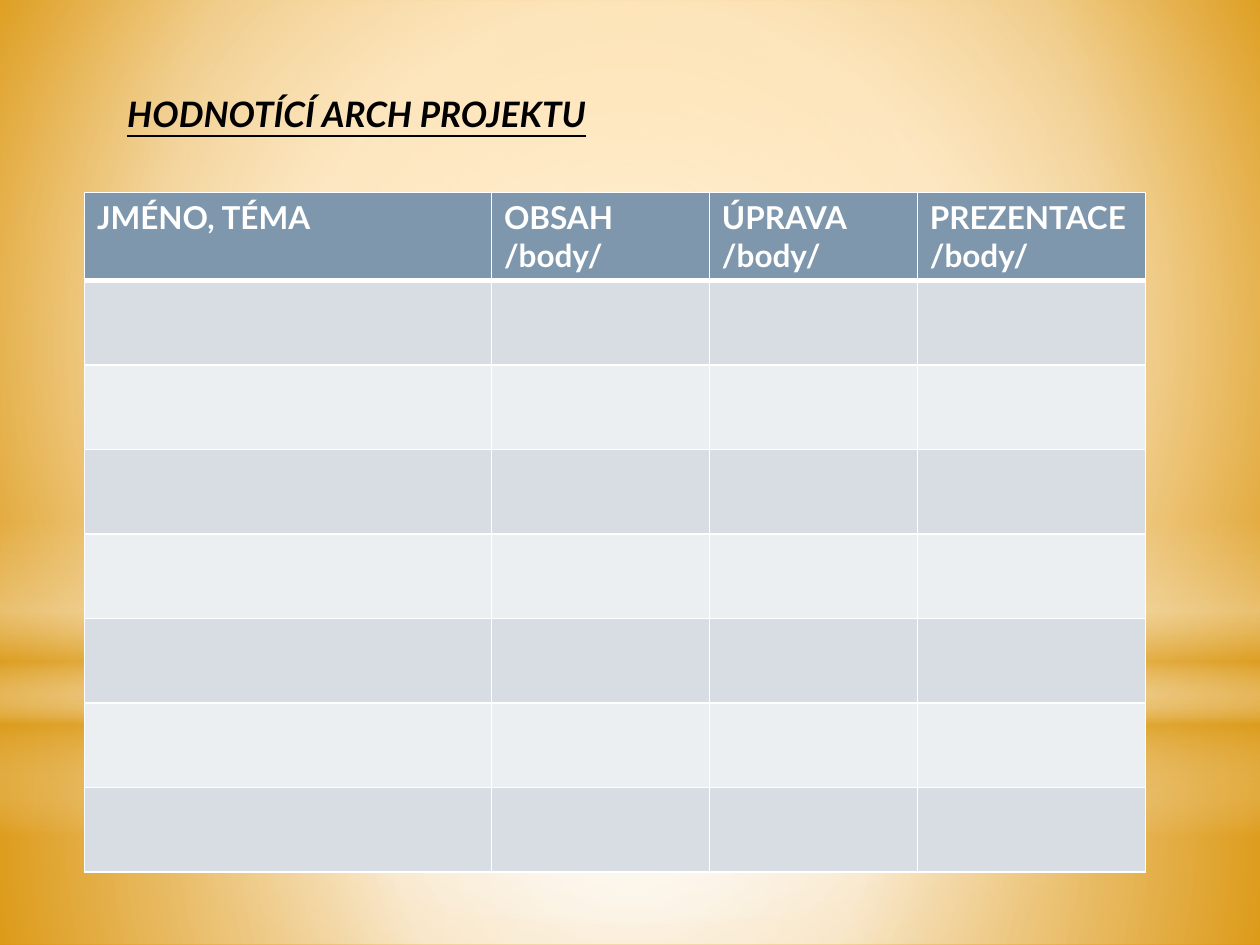
from dataclasses import dataclass

from pptx import Presentation
from pptx.dml.color import RGBColor
from pptx.enum.shapes import MSO_SHAPE
from pptx.enum.text import MSO_ANCHOR, MSO_AUTO_SIZE, PP_ALIGN
from pptx.oxml import parse_xml
from pptx.oxml.ns import nsdecls, qn
from pptx.util import Pt


@dataclass(frozen=True)
class Theme:
    font: str = "Lato"
    title_size: int = 20
    table_size: int = 18
    ink: str = "000000"
    white: str = "FFFFFF"
    gold: str = "DC9E1F"
    header: str = "7E97AD"
    bands: tuple = ("D8DDE3", "ECEFF1")


THEME = Theme()
CIRCLE = '<a:path path="circle"><a:fillToRect l="{}000" t="{}000" r="{}000" b="{}000"/></a:path>'
CENTERED = CIRCLE.format(50, 50, 50, 50)
VERTICAL = '<a:lin ang="5400000" scaled="0"/>'
COLUMNS = [
    (232.56, ["JMÉNO, TÉMA"]),
    (124.56, ["OBSAH", "/body/"]),
    (118.8, ["ÚPRAVA", "/body/"]),
    (130.32, ["PREZENTACE", "/body/"]),
]
BODY_ROWS = 7
ROW_HEIGHT = 48.25


def set_gradient(fill, element, stops, direction):
    fill.solid()
    fill.fore_color.rgb = RGBColor.from_string(THEME.white)
    solid = next(element.iter(qn("a:solidFill")))
    marks = "".join(
        f'<a:gs pos="{position}000"><a:srgbClr val="{color}">'
        f'<a:alpha val="{opacity}000"/></a:srgbClr></a:gs>'
        for position, color, opacity in stops
    )
    gradient = parse_xml(
        f'<a:gradFill {nsdecls("a")} rotWithShape="1"><a:gsLst>{marks}</a:gsLst>{direction}</a:gradFill>'
    )
    solid.getparent().replace(solid, gradient)


def add_glow(page, kind, top, height, stops, direction=CENTERED):
    glow = page.shapes.add_shape(kind, Pt(0), Pt(top), Pt(720), Pt(height))
    glow.shadow.inherit = False
    set_gradient(glow.fill, glow.element, stops, direction)
    glow.line.fill.background()


def add_backdrop(page):
    white, gold = THEME.white, THEME.gold
    background_stops = [(0, "FFA607", 100), (60, "F9CD88", 100), (100, "E08E02", 100)]
    set_gradient(page.background.fill, page.element, background_stops, CIRCLE.format(20, 10, 20, 60))
    rectangle = MSO_SHAPE.RECTANGLE
    add_glow(page, rectangle, 402, 138, [(0, white, 91), (37, white, 76), (100, gold, 79)])
    add_glow(page, rectangle, 0, 402, [(0, white, 89), (48, white, 62), (100, gold, 79)])
    horizon = [(0, white, 0), (29, white, 30), (45, gold, 40),
               (55, white, 26), (65, gold, 60), (100, white, 0)]
    add_glow(page, rectangle, 297, 180, horizon, VERTICAL)
    add_glow(page, MSO_SHAPE.OVAL, 126, 402, [(0, white, 100), (56, white, 0)])


def add_span(para, text, size, color):
    span = para.add_run()
    span.text = text
    span.font.name = THEME.font
    span.font.size = Pt(size)
    span.font.bold = True
    span.font.color.rgb = RGBColor.from_string(color)
    return span


def add_title(page, text):
    box = page.shapes.title
    box.left, box.top, box.width, box.height = Pt(65.5), Pt(49), Pt(283.7), Pt(55.4)
    frame = box.text_frame
    frame.word_wrap = False
    frame.auto_size = MSO_AUTO_SIZE.NONE
    frame.vertical_anchor = MSO_ANCHOR.TOP
    para = frame.paragraphs[0]
    para.alignment = PP_ALIGN.LEFT
    span = add_span(para, text, THEME.title_size, THEME.ink)
    span.font.italic = True
    span.font.underline = True
    box.element.getparent().append(box.element)


def format_cell(cell, color, top=1, bottom=1):
    cell.fill.solid()
    cell.fill.fore_color.rgb = RGBColor.from_string(color)
    properties = cell._tc.get_or_add_tcPr()
    for index, (side, width) in enumerate(zip("LRTB", (1, 1, top, bottom))):
        border = parse_xml(
            f'<a:ln{side} {nsdecls("a")} w="{Pt(width)}"><a:solidFill>'
            f'<a:srgbClr val="{THEME.white}"/></a:solidFill></a:ln{side}>'
        )
        properties.insert(index, border)


def add_score_table(page):
    total_width = sum(width for width, _ in COLUMNS)
    row_count = BODY_ROWS + 1
    table = page.shapes.add_table(
        row_count, len(COLUMNS), Pt(48.25), Pt(110), Pt(total_width), Pt(ROW_HEIGHT * row_count)
    ).table
    for row in table.rows:
        row.height = Pt(ROW_HEIGHT)
    for column, (width, lines) in enumerate(COLUMNS):
        table.columns[column].width = Pt(width)
        heading = table.cell(0, column)
        format_cell(heading, THEME.header, bottom=3)
        frame = heading.text_frame
        for index, line in enumerate(lines):
            para = frame.add_paragraph() if index else frame.paragraphs[0]
            add_span(para, line, THEME.table_size, THEME.white)
        for row in range(1, row_count):
            color = THEME.bands[(row - 1) % 2]
            format_cell(table.cell(row, column), color, top=3 if row == 1 else 1)


def main():
    deck = Presentation()
    deck.slide_width, deck.slide_height = Pt(720), Pt(540)
    page = deck.slides.add_slide(deck.slide_layouts[5])
    add_backdrop(page)
    add_title(page, "HODNOTÍCÍ ARCH PROJEKTU")
    add_score_table(page)
    deck.save("out.pptx")


if __name__ == "__main__":
    main()
